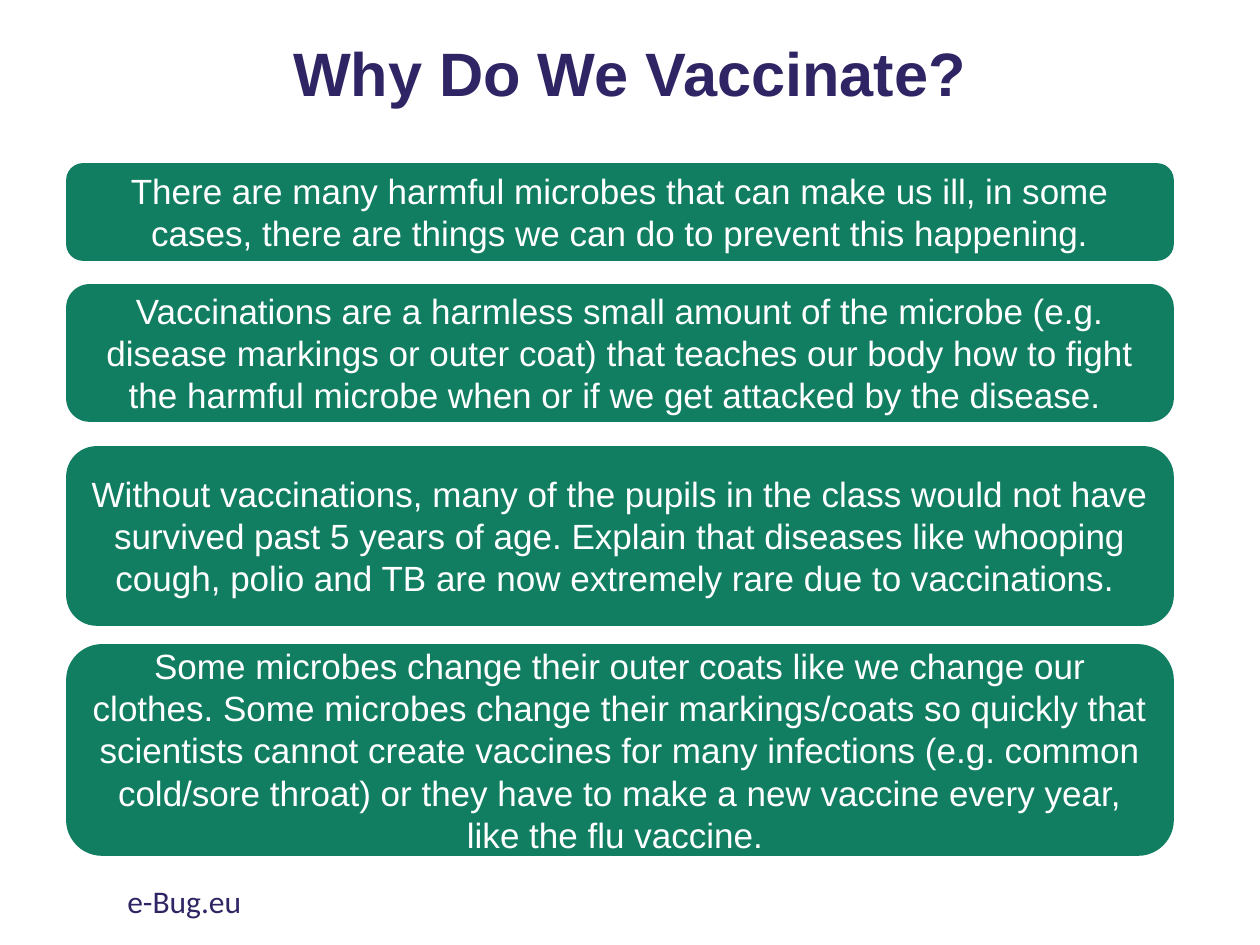
from dataclasses import dataclass

from pptx import Presentation
from pptx import util as u
from pptx.dml.color import RGBColor
from pptx.enum import shapes, text


@dataclass(frozen=True)
class Theme:
    navy: str = "302564"
    green: str = "117E62"
    white: str = "FFFFFF"
    font: str = "Arial"
    footer_font: str = "Calibri"
    title_size: int = 35
    card_size: int = 20
    footer_size: int = 18


def px(n):
    return u.Emu(round(n * 914400 / 126))


class Deck:
    def __init__(self, theme):
        self.theme = theme
        self.prs = Presentation()
        self.prs.slide_width, self.prs.slide_height = px(1260), px(945)
        self.s = self.prs.slides.add_slide(self.prs.slide_layouts[6])

    def set_text(self, sp, words, font, size, color, align, anchor, bold=False):
        tf = sp.text_frame
        tf.text = words
        tf.word_wrap = True
        tf.vertical_anchor = anchor
        p = tf.paragraphs[0]
        p.alignment = align
        r = p.runs[0]
        r.font.name = font
        r.font.size = u.Pt(size)
        r.font.bold = bold
        r.font.color.rgb = RGBColor.from_string(color)
        return p

    def title(self, box, words):
        t = self.theme
        sp = self.s.shapes.add_textbox(*map(px, box))
        p = self.set_text(sp, words, t.font, t.title_size, t.navy,
                          text.PP_ALIGN.CENTER, text.MSO_ANCHOR.MIDDLE, bold=True)
        p.line_spacing = 0.9

    def card(self, box, words):
        t = self.theme
        sp = self.s.shapes.add_shape(
            shapes.MSO_SHAPE.ROUNDED_RECTANGLE, *map(px, box))
        sp.shadow.inherit = False
        green = RGBColor.from_string(t.green)
        sp.fill.solid()
        sp.fill.fore_color.rgb = green
        sp.line.color.rgb = green
        sp.line.width = u.Pt(1)
        self.set_text(sp, words, t.font, t.card_size, t.white,
                      text.PP_ALIGN.CENTER, text.MSO_ANCHOR.MIDDLE)

    def footer(self, box, words):
        t = self.theme
        sp = self.s.shapes.add_textbox(*map(px, box))
        self.set_text(sp, words, t.footer_font, t.footer_size, t.navy,
                      text.PP_ALIGN.LEFT, text.MSO_ANCHOR.TOP)


CARD_LEFT, CARD_WIDTH = 67, 1106
CARDS = [
    (164, 96, "There are many harmful microbes that can make us ill, in some "
     "cases, there are things we can do to prevent this happening."),
    (285, 136, "Vaccinations are a harmless small amount of the microbe (e.g. "
     "disease markings or outer coat) that teaches our body how to fight "
     "the harmful microbe when or if we get attacked by the disease. "),
    (447, 178, "Without vaccinations, many of the pupils in the class would "
     "not have survived past 5 years of age. Explain that diseases like "
     "whooping cough, polio and TB are now extremely rare due to "
     "vaccinations. "),
    (645, 210, "Some microbes change their outer coats like we change our "
     "clothes. Some microbes change their markings/coats so quickly that "
     "scientists cannot create vaccines for many infections (e.g. common "
     "cold/sore throat) or they have to make a new vaccine every year, "
     "like the flu vaccine. "),
]


def main():
    deck = Deck(Theme())
    deck.title((87, 19, 1086, 115), "Why Do We Vaccinate?")
    for top, height, words in CARDS:
        deck.card((CARD_LEFT, top, CARD_WIDTH, height), words)
    deck.footer((115, 876, 426, 50), "e-Bug.eu")
    deck.prs.save("out.pptx")


if __name__ == "__main__":
    main()
